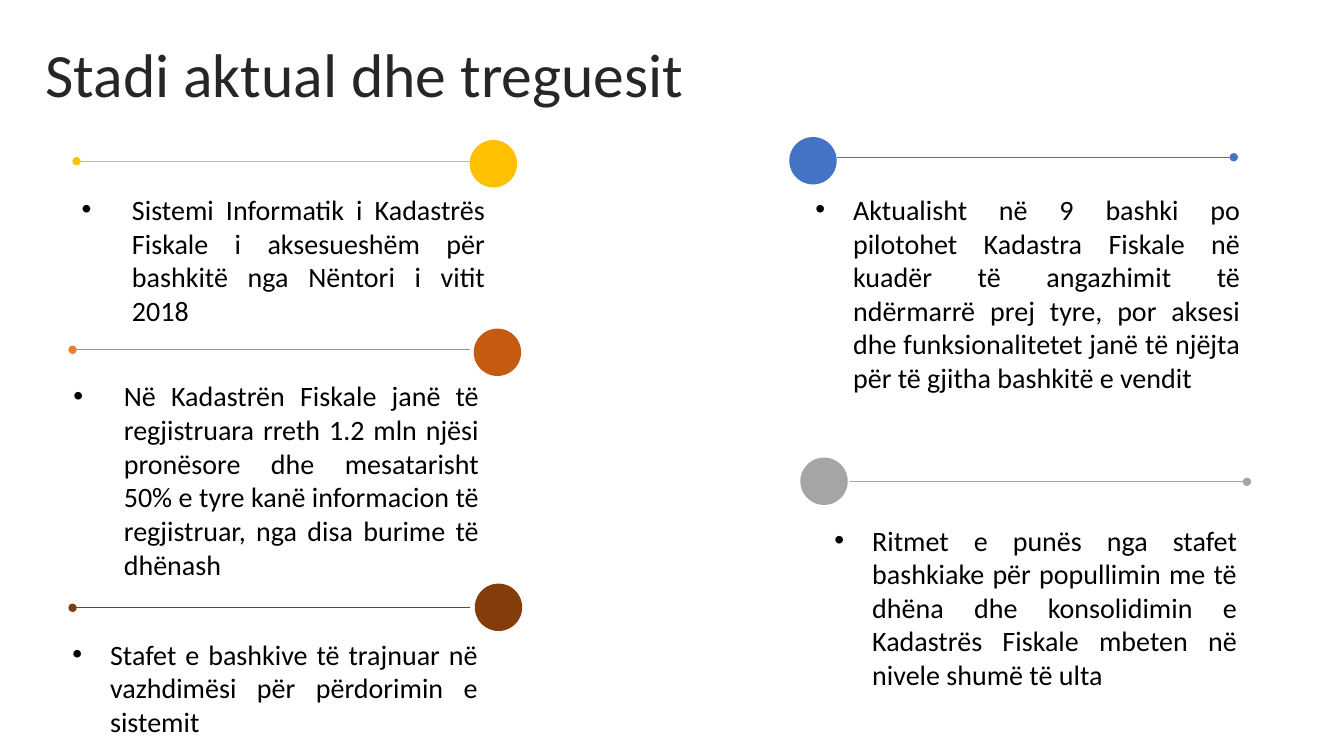
"""Build the slide on the current state and its indicators."""
from dataclasses import dataclass

from lxml import etree
from pptx import Presentation
from pptx import util as u
from pptx.dml.color import RGBColor
from pptx.enum import shapes, text
from pptx.oxml.ns import qn


@dataclass(frozen=True)
class Theme:
    """Colours, font and type sizes of the slide."""
    font: str = "Calibri"
    head: int = 44
    body: int = 20
    thin: float = 0.5
    title: str = "262626"
    ink: str = "000000"
    gold: str = "FFC000"
    blue: str = "4472C4"
    grey: str = "A5A5A5"
    rust: str = "C55A11"
    coral: str = "ED7D31"
    brown: str = "843C0B"


@dataclass(frozen=True)
class Item:
    """One indicator: its words, colours and places in slide shares."""
    words: str
    disc: tuple
    rule: tuple
    box: tuple
    fill: str
    line: str
    dot: str
    hang: float


T = Theme()
WIDE, HIGH = u.Inches(13.33), u.Inches(7.5)
DISC = u.Inches(0.47)
SPAN = 29.55

ITEMS = [
    Item("Sistemi Informatik i Kadastrës Fiskale i aksesueshëm për bashkitë "
         "nga Nëntori i vitit 2018",
         (34.95, 18.53), (5.7, 21.33), (5.33, 24.8, 31.5, 19.33),
         T.gold, T.gold, "headEnd", 3.75),
    Item("Në Kadastrën Fiskale janë të regjistruara rreth 1.2 mln njësi "
         "pronësore dhe mesatarisht 50% e tyre kanë informacion të "
         "regjistruar, nga disa burime të dhënash",
         (35.25, 43.47), (5.4, 46.27), (4.73, 49.47, 31.65, 32.27),
         T.rust, T.coral, "headEnd", 3.75),
    Item("Stafet e bashkive të trajnuar në vazhdimësi për përdorimin e "
         "sistemit",
         (35.33, 77.2), (5.4, 80.4), (4.65, 83.6, 31.65, 18.8),
         T.brown, T.brown, "headEnd", 2.81),
    Item("Aktualisht në 9 bashki po pilotohet Kadastra Fiskale në kuadër të "
         "angazhimit të ndërmarrë prej tyre, por aksesi dhe funksionalitetet "
         "janë të njëjta për të gjitha bashkitë e vendit",
         (58.73, 18.13), (62.25, 20.8), (59.93, 24.8, 33.08, 28.27),
         T.blue, T.blue, "tailEnd", 2.81),
    Item("Ritmet e punës nga stafet bashkiake për popullimin me të dhëna dhe "
         "konsolidimin e Kadastrës Fiskale mbeten në nivele shumë të ulta",
         (59.55, 60.53), (63.23, 63.73), (61.35, 68.53, 31.43, 23.73),
         T.grey, T.grey, "tailEnd", 2.81),
]


def across(share):
    """Turn a percentage of the slide's width into a length."""
    return u.Emu(round(WIDE * share / 100))


def down(share):
    """Turn a percentage of the slide's height into a length."""
    return u.Emu(round(HIGH * share / 100))


def place(box):
    """Turn left, top, width and height shares into lengths."""
    left, top, wide, high = box
    return across(left), down(top), across(wide), down(high)


def write(frame, words, size, color, align, hang=0, **form):
    """Fill a text frame with one formatted paragraph."""
    frame.word_wrap = True
    par = frame.paragraphs[0]
    par.alignment = align
    for name, value in form.items():
        setattr(par, name, value)
    run = par.add_run()
    run.text = words
    run.font.name = T.font
    run.font.size = u.Pt(size)
    run.font.color.rgb = RGBColor.from_string(color)
    if hang:
        props = par._p.get_or_add_pPr()
        props.set("marL", str(across(hang)))
        props.set("indent", str(-across(hang)))
        etree.SubElement(props, qn("a:buFont"), typeface="Arial")
        etree.SubElement(props, qn("a:buChar"), char="•")


def title(slide, words):
    """Place and format the title."""
    head = slide.shapes.title
    head.left, head.top, head.width, head.height = place(
        (2.63, 4.93, 94.95, 10.53))
    head.text_frame.auto_size = text.MSO_AUTO_SIZE.NONE
    head.text_frame.vertical_anchor = text.MSO_ANCHOR.MIDDLE
    write(head.text_frame, words, T.head, T.title, text.PP_ALIGN.LEFT,
          line_spacing=0.9, space_before=u.Pt(10))


def rule(slide, start, color, dot):
    """Draw a thin level line with a dot at one end."""
    left, top = start
    line = slide.shapes.add_connector(
        shapes.MSO_CONNECTOR.STRAIGHT, across(left), down(top),
        across(left + SPAN), down(top))
    line.line.width = u.Pt(T.thin)
    line.line.color.rgb = RGBColor.from_string(color)
    etree.SubElement(line.line._get_or_add_ln(), qn("a:" + dot), type="oval")
    etree.SubElement(line._element.spPr, qn("a:effectLst"))


def disc(slide, spot, color):
    """Draw a plain filled circle."""
    left, top = spot
    dot = slide.shapes.add_shape(
        shapes.MSO_SHAPE.OVAL, across(left), down(top), DISC, DISC)
    dot.shadow.inherit = False
    dot.fill.solid()
    dot.fill.fore_color.rgb = RGBColor.from_string(color)
    dot.line.fill.background()


def note(slide, box, words, hang):
    """Add a justified bullet in a box that fits its text."""
    frame = slide.shapes.add_textbox(*place(box)).text_frame
    frame.auto_size = text.MSO_AUTO_SIZE.SHAPE_TO_FIT_TEXT
    write(frame, words, T.body, T.ink, text.PP_ALIGN.JUSTIFY, hang)


def main():
    """Build and save the slide."""
    deck = Presentation()
    deck.slide_width, deck.slide_height = WIDE, HIGH
    slide = deck.slides.add_slide(deck.slide_layouts.get_by_name("Title Only"))
    title(slide, "Stadi aktual dhe treguesit")
    for item in ITEMS:
        rule(slide, item.rule, item.line, item.dot)
        disc(slide, item.disc, item.fill)
        note(slide, item.box, item.words, item.hang)
    deck.save("out.pptx")


if __name__ == "__main__":
    main()
